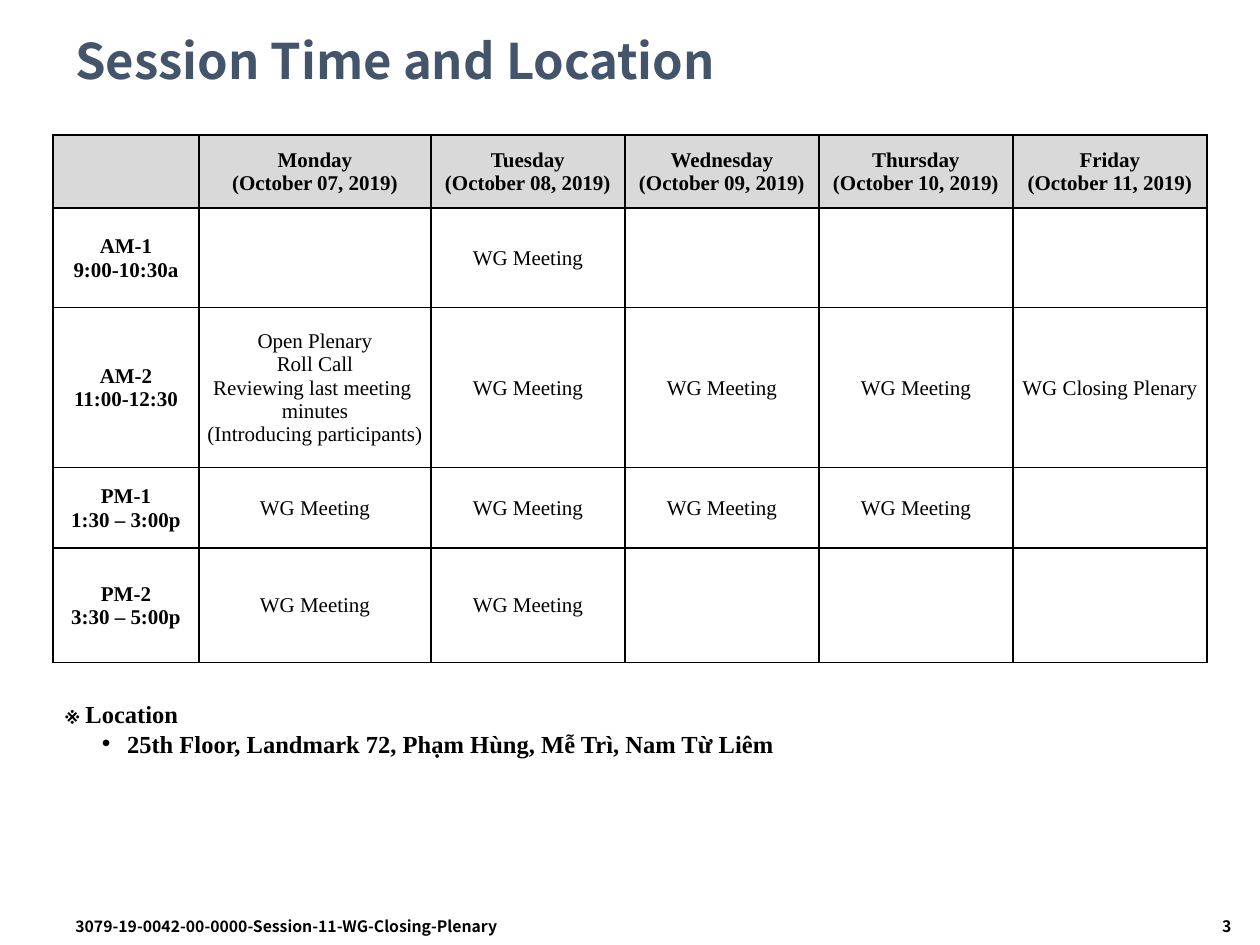
from pptx import Presentation
from pptx.dml.color import RGBColor
from pptx.enum.text import MSO_ANCHOR as Anchor, PP_ALIGN as Align
from pptx.oxml import parse_xml
from pptx.oxml.ns import nsdecls
from pptx.util import Inches, Pt

SANS, SERIF = "Noto Sans CJK KR", "Times New Roman"
BLACK, SLATE, GRAY = "000000", "44546A", "D9D9D9"

TITLE = "Session Time and Location"
DOCUMENT = "3079-19-0042-00-0000-Session-11-WG-Closing-Plenary"
PAGE = "3"
LOCATION = ["※ Location", "25th Floor, Landmark 72, Phạm Hùng, Mễ Trì, Nam Từ Liêm"]

WG = ["WG Meeting"]
OPENING = ["Open Plenary", "Roll Call", "Reviewing last meeting \vminutes",
           "(Introducing participants)"]
DAYS = ["Monday", "Tuesday", "Wednesday", "Thursday", "Friday"]
HEADER = [[]] + [[day, f"(October {date:02}, 2019)"] for date, day in enumerate(DAYS, 7)]
SCHEDULE = [
    HEADER,
    [["AM-1", "9:00-10:30a"], [], WG, [], [], []],
    [["AM-2", "11:00-12:30"], OPENING, WG, WG, WG, ["WG Closing Plenary"]],
    [["PM-1", "1:30 – 3:00p"], WG, WG, WG, WG, []],
    [["PM-2", "3:30 – 5:00p"], WG, WG, [], [], []],
]
COLUMN_WIDTHS = [1.16, 1.84] + [1.54] * 4
ROW_HEIGHTS = [0.58, 0.79, 1.27, 0.64, 0.91]
TABLE_LEFT, TABLE_TOP = 0.42, 1.07


def rgb(value):
    return RGBColor.from_string(value)


def write(frame, lines, size, font, color=BLACK, bold=True, align=Align.LEFT):
    for index, line in enumerate(lines):
        paragraph = frame.paragraphs[0] if index == 0 else frame.add_paragraph()
        paragraph.text = line
        paragraph.alignment = align
        paragraph.font.size = Pt(size)
        paragraph.font.name = font
        paragraph.font.bold = bold
        paragraph.font.color.rgb = rgb(color)


def add_text(slide, box, lines, size, font, **style):
    frame = slide.shapes.add_textbox(*map(Inches, box)).text_frame
    frame.word_wrap = True
    write(frame, lines, size, font, **style)
    return frame


def add_bullet(paragraph):
    properties = paragraph._p.get_or_add_pPr()
    properties.set("marL", str(Inches(0.49)))
    properties.set("indent", str(Inches(-0.2)))
    # Bullet elements come before the default run properties
    properties.insert(0, parse_xml(f'<a:buChar {nsdecls("a")} char="•"/>'))
    properties.insert(0, parse_xml(f'<a:buFont {nsdecls("a")} typeface="Arial"/>'))


def add_borders(cell):
    properties = cell._tc.get_or_add_tcPr()
    for index, side in enumerate("LRTB"):
        properties.insert(index, parse_xml(
            f'<a:ln{side} {nsdecls("a")} w="{Pt(1)}"><a:solidFill>'
            f'<a:srgbClr val="{BLACK}"/></a:solidFill></a:ln{side}>'))


def add_schedule(slide):
    table = slide.shapes.add_table(
        len(ROW_HEIGHTS), len(COLUMN_WIDTHS), Inches(TABLE_LEFT), Inches(TABLE_TOP),
        Inches(sum(COLUMN_WIDTHS)), Inches(sum(ROW_HEIGHTS))).table
    for column, width in zip(table.columns, COLUMN_WIDTHS):
        column.width = Inches(width)
    for row, height in zip(table.rows, ROW_HEIGHTS):
        row.height = Inches(height)
    for r, entries in enumerate(SCHEDULE):
        for c, lines in enumerate(entries):
            cell = table.cell(r, c)
            cell.vertical_anchor = Anchor.MIDDLE
            cell.margin_left = cell.margin_right = cell.margin_top = Inches(0.01)
            cell.margin_bottom = 0
            if r == 0:
                cell.fill.solid()
                cell.fill.fore_color.rgb = rgb(GRAY)
            else:
                cell.fill.background()
            add_borders(cell)
            write(cell.text_frame, lines, 12, SERIF, bold=r == 0 or c == 0,
                  align=Align.CENTER)


def main():
    presentation = Presentation()
    presentation.slide_width, presentation.slide_height = Inches(10), Inches(7.5)
    slide = presentation.slides.add_slide(presentation.slide_layouts[6])

    # Title
    title = add_text(slide, (0.5, 0.17, 9, 0.67), [TITLE], 28, SANS, color=SLATE)
    title.vertical_anchor = Anchor.MIDDLE
    title.paragraphs[0].line_spacing = 0.9

    # Footer
    add_text(slide, (8.25, 7.23, 1.62, 0.27), [PAGE], 9, SANS, align=Align.RIGHT)
    add_text(slide, (0.5, 7.23, 4.42, 0.27), [DOCUMENT], 9, SANS)

    # Location and timetable
    location = add_text(slide, (TABLE_LEFT, 5.5, sum(COLUMN_WIDTHS), 0.57),
                        LOCATION, 14, SERIF)
    add_bullet(location.paragraphs[1])
    add_schedule(slide)

    presentation.save("out.pptx")


if __name__ == "__main__":
    main()
